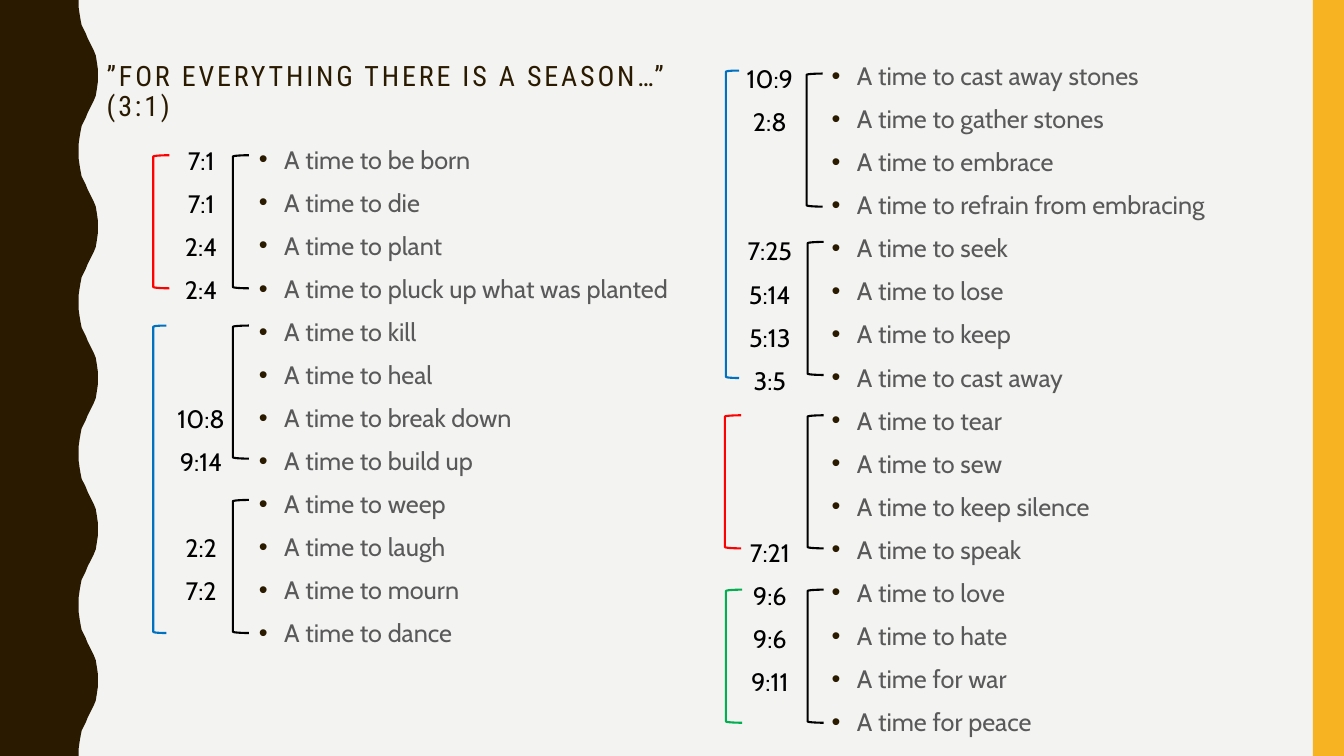
from dataclasses import dataclass

from lxml.etree import SubElement
from pptx import Presentation
from pptx.dml.color import RGBColor
from pptx.enum.shapes import MSO_SHAPE
from pptx.enum.text import MSO_ANCHOR, PP_ALIGN
from pptx.oxml.ns import qn
from pptx.util import Inches, Pt


@dataclass(frozen=True)
class Theme:
    paper: str = "F3F3F2"
    brown: str = "2A1A00"
    gold: str = "F8B323"
    verse: str = "595959"
    black: str = "000000"
    red: str = "FF0000"
    blue: str = "0070C0"
    green: str = "00B050"
    title_font: str = "Roboto Condensed"
    body_font: str = "Cabin"
    title_size: int = 20
    body_size: int = 18
    space_before: float = 7
    row_pitch: float = 30.8
    bracket_width: float = 1.5


@dataclass(frozen=True)
class Box:
    left: float
    top: float
    width: float
    height: float

    def inner(self, dx, dy, width, height):
        return Box(self.left + dx, self.top + dy, width, height)

    def lengths(self):
        return [Inches(v) for v in (self.left, self.top, self.width, self.height)]


THEME = Theme()
BRACKET_SIZES = {4: (0.16, 1.32), 8: (0.13, 3.05)}
HALF_WAVE = [
    (0.78, 0), (0.78, 0.07), (0.79, 0.14), (0.8, 0.2), (0.81, 0.25),
    (0.83, 0.29), (0.85, 0.33), (0.87, 0.38), (0.89, 0.42), (0.91, 0.46),
    (0.93, 0.5), (0.95, 0.55), (0.96, 0.61), (0.97, 0.68), (0.97, 0.75),
]
WAVE_LENGTH = 1.5

LEFT_COLUMN = {
    "verses": [
        "A time to be born", "A time to die", "A time to plant",
        "A time to pluck up what was planted", "A time to kill", "A time to heal",
        "A time to break down", "A time to build up", "A time to weep",
        "A time to laugh", "A time to mourn", "A time to dance",
    ],
    "verses_offset": (0.95, 0),
    "references": {0: "7:1", 1: "7:1", 2: "2:4", 3: "2:4", 6: "10:8",
                   7: "9:14", 9: "2:2", 10: "7:2"},
    "references_offset": (0.13, 0.01),
    "brackets": [
        (0.79, 0.19, 4, THEME.black), (0.79, 1.88, 4, THEME.black),
        (0.79, 3.61, 4, THEME.black),
        (0, 0.19, 4, THEME.red), (0, 1.88, 8, THEME.blue),
    ],
}
RIGHT_COLUMN = {
    "verses": [
        "A time to cast away stones", "A time to gather stones",
        "A time to embrace", "A time to refrain from embracing",
        "A time to seek", "A time to lose", "A time to keep",
        "A time to cast away", "A time to tear", "A time to sew",
        "A time to keep silence", "A time to speak", "A time to love",
        "A time to hate", "A time for war", "A time for peace",
    ],
    "verses_offset": (0.96, 0),
    "references": {0: "10:9", 1: "2:8", 4: "7:25", 5: "5:14", 6: "5:13",
                   7: "3:5", 11: "7:21", 12: "9:6", 13: "9:6", 14: "9:11"},
    "references_offset": (0.1, 0.03),
    "brackets": [
        (0.81, 0.21, 4, THEME.black), (0.82, 1.88, 4, THEME.black),
        (0.82, 3.6, 4, THEME.black), (0.82, 5.33, 4, THEME.black),
        (0.01, 0.18, 8, THEME.blue), (0, 3.6, 4, THEME.red),
        (0.01, 5.33, 4, THEME.green),
    ],
}


def apply_format(target, values):
    for name, value in values.items():
        setattr(target, name, value)


def paint(shape, colour):
    shape.shadow.inherit = False
    shape.fill.solid()
    shape.fill.fore_color.rgb = RGBColor.from_string(colour)
    shape.line.fill.background()


def add_frame(slide, box):
    frame = slide.shapes.add_textbox(*box.lengths()).text_frame
    apply_format(frame, {"word_wrap": True, "vertical_anchor": MSO_ANCHOR.TOP})
    return frame


def add_words(paragraph, words, font, size, colour):
    run = paragraph.add_run()
    run.text = words
    apply_format(run.font, {"name": font, "size": Pt(size)})
    run.font.color.rgb = RGBColor.from_string(colour)
    return run


def add_bullet(paragraph):
    properties = paragraph._p.get_or_add_pPr()
    properties.set("marL", str(Inches(0.25)))
    properties.set("indent", str(-Inches(0.25)))
    colour = SubElement(properties, qn("a:buClr"))
    SubElement(colour, qn("a:srgbClr"), val=THEME.brown)
    SubElement(properties, qn("a:buFont"), typeface="Arial")
    SubElement(properties, qn("a:buChar"), char="•")


def add_rows(slide, box, rows, colour, align, bulleted):
    frame = add_frame(slide, box)
    previous = -1
    for row, words in rows.items():
        paragraph = frame.paragraphs[0] if previous < 0 else frame.add_paragraph()
        skipped = row - previous - 1
        apply_format(paragraph, {
            "alignment": align,
            "line_spacing": 1.1,
            "space_before": Pt(THEME.space_before + skipped * THEME.row_pitch),
        })
        if bulleted:
            add_bullet(paragraph)
        add_words(paragraph, words, THEME.body_font, THEME.body_size, colour)
        previous = row


def add_bracket(slide, box, colour):
    bracket = slide.shapes.add_shape(MSO_SHAPE.LEFT_BRACKET, *box.lengths())
    bracket.shadow.inherit = False
    bracket.fill.background()
    bracket.line.color.rgb = RGBColor.from_string(colour)
    bracket.line.width = Pt(THEME.bracket_width)


def add_column(slide, box, content):
    verses_box = box.inner(*content["verses_offset"], 4.41, box.height)
    add_rows(slide, verses_box, dict(enumerate(content["verses"])),
             THEME.verse, PP_ALIGN.LEFT, True)
    for dx, dy, rows, colour in content["brackets"]:
        add_bracket(slide, box.inner(dx, dy, *BRACKET_SIZES[rows]), colour)
    references_box = box.inner(*content["references_offset"], 0.69, box.height)
    add_rows(slide, references_box, content["references"],
             THEME.black, PP_ALIGN.CENTER, False)


def add_wavy_edge(slide, box):
    wave = HALF_WAVE + [(x, WAVE_LENGTH - y) for x, y in HALF_WAVE[-2::-1]]
    crests = round(box.height / WAVE_LENGTH)
    edge = [(box.left + x, box.top + y + crest * WAVE_LENGTH)
            for crest in range(crests) for x, y in wave]
    outline = edge + [(box.left, box.top + box.height)]
    builder = slide.shapes.build_freeform(Inches(box.left), Inches(box.top))
    builder.add_line_segments([(Inches(x), Inches(y)) for x, y in outline])
    paint(builder.convert_to_shape(), THEME.brown)


def add_gold_band(slide, box):
    paint(slide.shapes.add_shape(MSO_SHAPE.RECTANGLE, *box.lengths()), THEME.gold)


def add_title(slide, box, words):
    paragraph = add_frame(slide, box).paragraphs[0]
    paragraph.line_spacing = 0.9
    run = add_words(paragraph, words, THEME.title_font, THEME.title_size, THEME.brown)
    run.font._element.set("spc", "200")


def main():
    presentation = Presentation()
    apply_format(presentation, {"slide_width": Inches(13.33), "slide_height": Inches(7.5)})
    slide = presentation.slides.add_slide(presentation.slide_layouts[6])
    slide.background.fill.solid()
    slide.background.fill.fore_color.rgb = RGBColor.from_string(THEME.paper)
    add_wavy_edge(slide, Box(0, 0, 0.97, 7.5))
    add_gold_band(slide, Box(13.02, 0, 0.31, 7.5))
    add_title(slide, Box(0.96, 0.57, 6.19, 0.62), "”FOR EVERYTHING THERE IS A SEASON…” (3:1)")
    add_column(slide, Box(1.52, 1.35, 5.36, 6.04), LEFT_COLUMN)
    add_column(slide, Box(7.19, 0.52, 5.37, 6.62), RIGHT_COLUMN)
    presentation.save("out.pptx")


if __name__ == "__main__":
    main()
